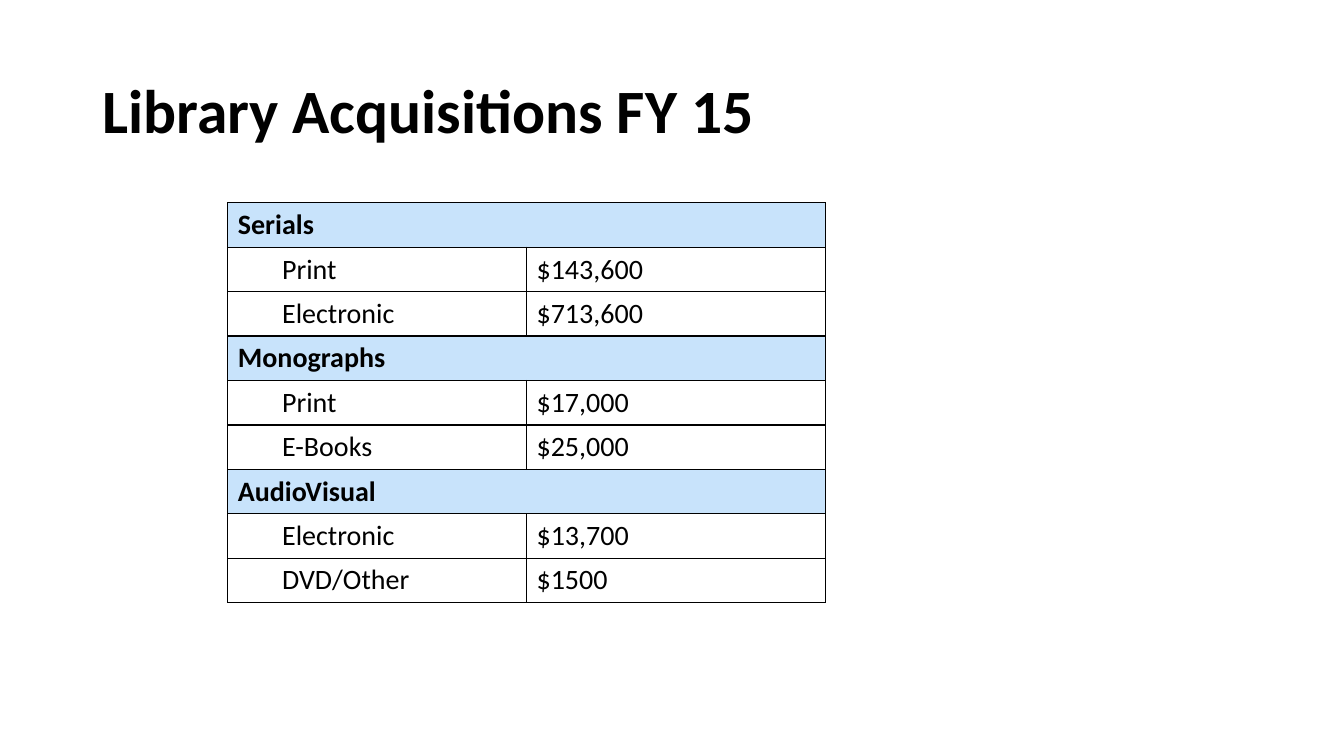
import pptx
import pptx.util
import pptx.dml.color
import pptx.enum.text
import lxml.etree

Pt = pptx.util.Pt

TITLE = "Library Acquisitions FY 15"
GROUPS = {
    "Serials": [("Print", "$143,600"), ("Electronic", "$713,600")],
    "Monographs": [("Print", "$17,000"), ("E-Books", "$25,000")],
    "AudioVisual": [("Electronic", "$13,700"), ("DVD/Other", "$1500")],
}
BLACK, WHITE, BLUE = "000000", "FFFFFF", "C8E3FB"
LEFT, TOP, COL, ROW = 162.7, 144.9, 213.4, 31.7
PAD, INDENT = 7.2, 31.6


def color(code):
    return pptx.dml.color.RGBColor.from_string(code)


def style(para, size, bold):
    para.font.color.rgb = color(BLACK)
    for key, val in {"name": "Calibri", "size": Pt(size), "bold": bold}.items():
        setattr(para.font, key, val)


def border(cell):
    props = cell._tc.get_or_add_tcPr()
    for spot, side in enumerate("LRTB"):
        line = lxml.etree.fromstring(
            f'<a:ln{side} xmlns:a="http://schemas.openxmlformats.org/drawingml/2006/main" w="{Pt(1)}">'
            f'<a:solidFill><a:srgbClr val="{BLACK}"/></a:solidFill></a:ln{side}>'
        )
        props.insert(spot, line)


def write(cell, text, fill, bold, indent):
    cell.text = text
    cell.margin_left = Pt(PAD + indent)
    cell.fill.solid()
    cell.fill.fore_color.rgb = color(fill)
    style(cell.text_frame.paragraphs[0], 20, bold)
    border(cell)


def main():
    deck = pptx.Presentation()
    deck.slide_width, deck.slide_height = Pt(960), Pt(540)
    slide = deck.slides.add_slide(deck.slide_layouts[5])

    title = slide.shapes.title
    place = {"left": 66, "top": 28.8, "width": 828, "height": 104.4}
    for key, val in place.items():
        setattr(title, key, Pt(val))
    title.text_frame.text = TITLE
    title.text_frame.vertical_anchor = pptx.enum.text.MSO_ANCHOR.MIDDLE
    para = title.text_frame.paragraphs[0]
    para.alignment = pptx.enum.text.PP_ALIGN.LEFT
    para.line_spacing = 0.9
    style(para, 44, True)

    rows = []
    for head, items in GROUPS.items():
        rows += [(head, ""), *items]
    table = slide.shapes.add_table(
        len(rows), 2, Pt(LEFT), Pt(TOP), Pt(2 * COL), Pt(len(rows) * ROW)
    ).table
    for key in ("first_row", "horz_banding"):
        setattr(table, key, False)

    for r, (label, cost) in enumerate(rows):
        head = not cost
        fill = BLUE if head else WHITE
        write(table.cell(r, 0), label, fill, head, 0 if head else INDENT)
        write(table.cell(r, 1), cost, fill, head, 0)
        if head:
            table.cell(r, 0).merge(table.cell(r, 1))

    deck.save("out.pptx")


if __name__ == "__main__":
    main()
